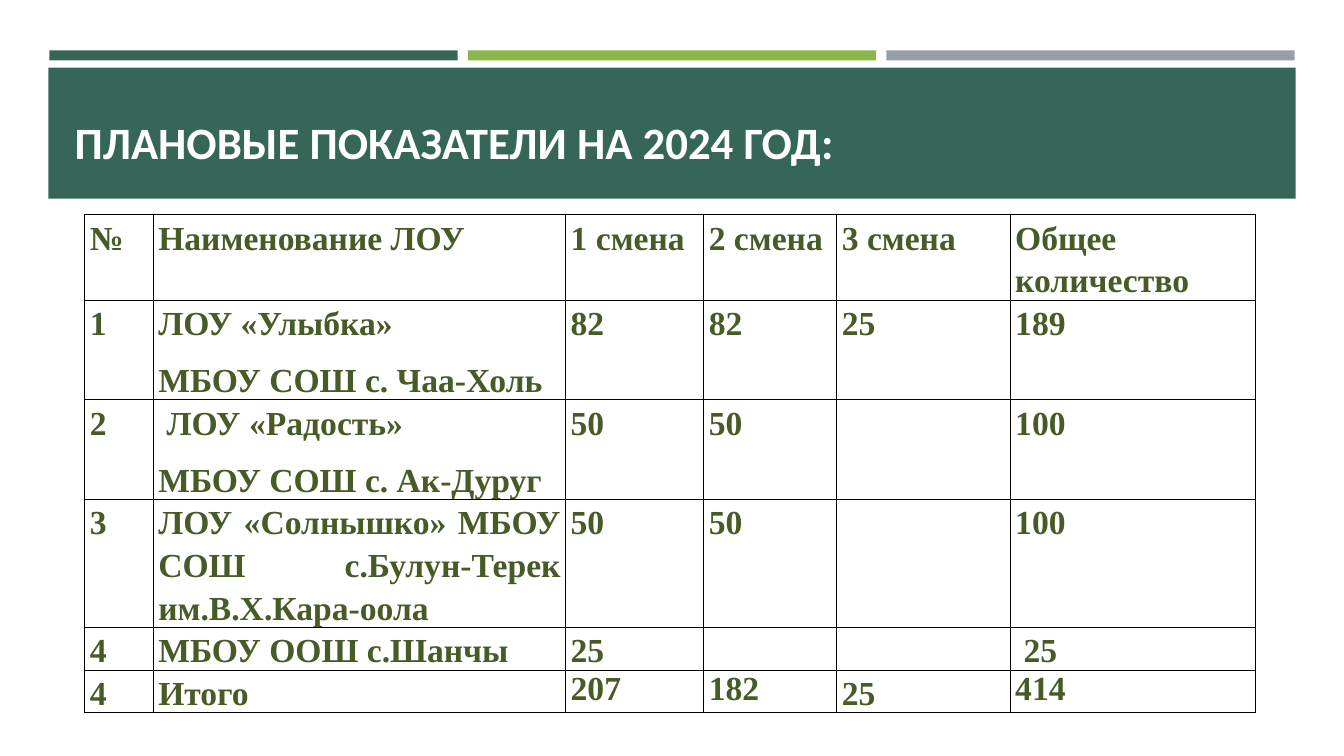
"""Build the slide with the planned camp figures for 2024."""
import pptx
import pptx.dml.color
import pptx.enum.shapes
import pptx.enum.text
import pptx.oxml
import pptx.oxml.ns
import pptx.util
from pptx.util import Inches

RGBColor = pptx.dml.color.RGBColor
TEAL = RGBColor(0x36, 0x66, 0x58)
GREEN = RGBColor(0x8C, 0xB6, 0x4A)
GREY = RGBColor(0x96, 0x9F, 0xA7)
OLIVE = RGBColor(0x46, 0x5B, 0x25)
WHITE = RGBColor(0xFF, 0xFF, 0xFF)
BLACK = RGBColor(0x00, 0x00, 0x00)

COLUMN_WIDTHS = [0.68, 4.09, 1.37, 1.32, 1.72, 2.43]
ROW_HEIGHTS = [0.85, 0.98, 0.98, 1.27, 0.42, 0.42]
ROWS = [
    ["№", "Наименование ЛОУ", "1 смена", "2 смена", "3 смена", "Общее количество"],
    ["1", "ЛОУ «Улыбка»\nМБОУ СОШ с. Чаа-Холь", "82", "82", "25", "189"],
    ["2", " ЛОУ «Радость»\nМБОУ СОШ с. Ак-Дуруг", "50", "50", "", "100"],
    ["3", "ЛОУ «Солнышко» МБОУ СОШ с.Булун-Терек им.В.Х.Кара-оола",
     "50", "50", "", "100"],
    ["4", "МБОУ ООШ с.Шанчы", "25", "", "", " 25"],
    ["4", "Итого", "207", "182", "25", "414"],
]
TIGHT_TOTALS = {"207", "182", "414"}


def add_bar(slide, left, top, width, height, color):
    bar = slide.shapes.add_shape(
        pptx.enum.shapes.MSO_SHAPE.RECTANGLE,
        Inches(left), Inches(top), Inches(width), Inches(height))
    bar.shadow.inherit = False
    bar.fill.solid()
    bar.fill.fore_color.rgb = color
    bar.line.fill.background()


def add_span(para, text, font_name, size, color):
    span = para.add_run()
    span.text = text
    span.font.name = font_name
    span.font.size = pptx.util.Pt(size)
    span.font.bold = True
    span.font.color.rgb = color


def format_title(slide, text):
    title = slide.shapes.title
    title.left, title.top = Inches(0.64), Inches(0.75)
    title.width, title.height = Inches(12.06), Inches(0.97)
    slide.shapes._spTree.append(title._element)
    frame = title.text_frame
    frame.word_wrap = True
    frame.vertical_anchor = pptx.enum.text.MSO_ANCHOR.BOTTOM
    para = frame.paragraphs[0]
    para.alignment = pptx.enum.text.PP_ALIGN.LEFT
    add_span(para, text, "Calibri", 32, WHITE)


def add_borders(cell):
    properties = cell._tc.get_or_add_tcPr()
    for index, side in enumerate(("lnL", "lnR", "lnT", "lnB")):
        border = pptx.oxml.parse_xml(
            f'<a:{side} {pptx.oxml.ns.nsdecls("a")} w="12700"><a:solidFill>'
            f'<a:srgbClr val="{BLACK}"/></a:solidFill></a:{side}>')
        properties.insert(index, border)


def fill_cell(cell, text):
    cell.margin_left = cell.margin_right = Inches(0.05)
    cell.margin_top = cell.margin_bottom = Inches(0)
    cell.fill.background()
    add_borders(cell)
    if not text:
        return
    frame = cell.text_frame
    for index, line in enumerate(text.split("\n")):
        para = frame.add_paragraph() if index else frame.paragraphs[0]
        if text not in TIGHT_TOTALS:
            para.alignment = pptx.enum.text.PP_ALIGN.JUSTIFY
            para.line_spacing = 1.15
            para.space_after = pptx.util.Pt(10)
        add_span(para, line, "Times New Roman", 24, OLIVE)


def add_plan_table(slide):
    table = slide.shapes.add_table(
        len(ROWS), len(COLUMN_WIDTHS), Inches(0.84), Inches(2.13),
        Inches(sum(COLUMN_WIDTHS)), Inches(sum(ROW_HEIGHTS))).table
    table.first_row = table.horz_banding = False
    for column, width in zip(table.columns, COLUMN_WIDTHS):
        column.width = Inches(width)
    for row, height, texts in zip(table.rows, ROW_HEIGHTS, ROWS):
        row.height = Inches(height)
        for cell, text in zip(row.cells, texts):
            fill_cell(cell, text)


def main():
    deck = pptx.Presentation()
    deck.slide_width, deck.slide_height = Inches(13.33), Inches(7.5)
    page = deck.slides.add_slide(deck.slide_layouts.get_by_name("Title Only"))
    for index, color in enumerate((TEAL, GREEN, GREY)):
        add_bar(page, 0.49 + 4.15 * index, 0.5, 4.05, 0.1, color)
    add_bar(page, 0.48, 0.67, 12.37, 1.3, TEAL)
    format_title(page, "ПЛАНОВЫЕ ПОКАЗАТЕЛИ НА 2024 ГОД:")
    add_plan_table(page)
    deck.save("out.pptx")


if __name__ == "__main__":
    main()
